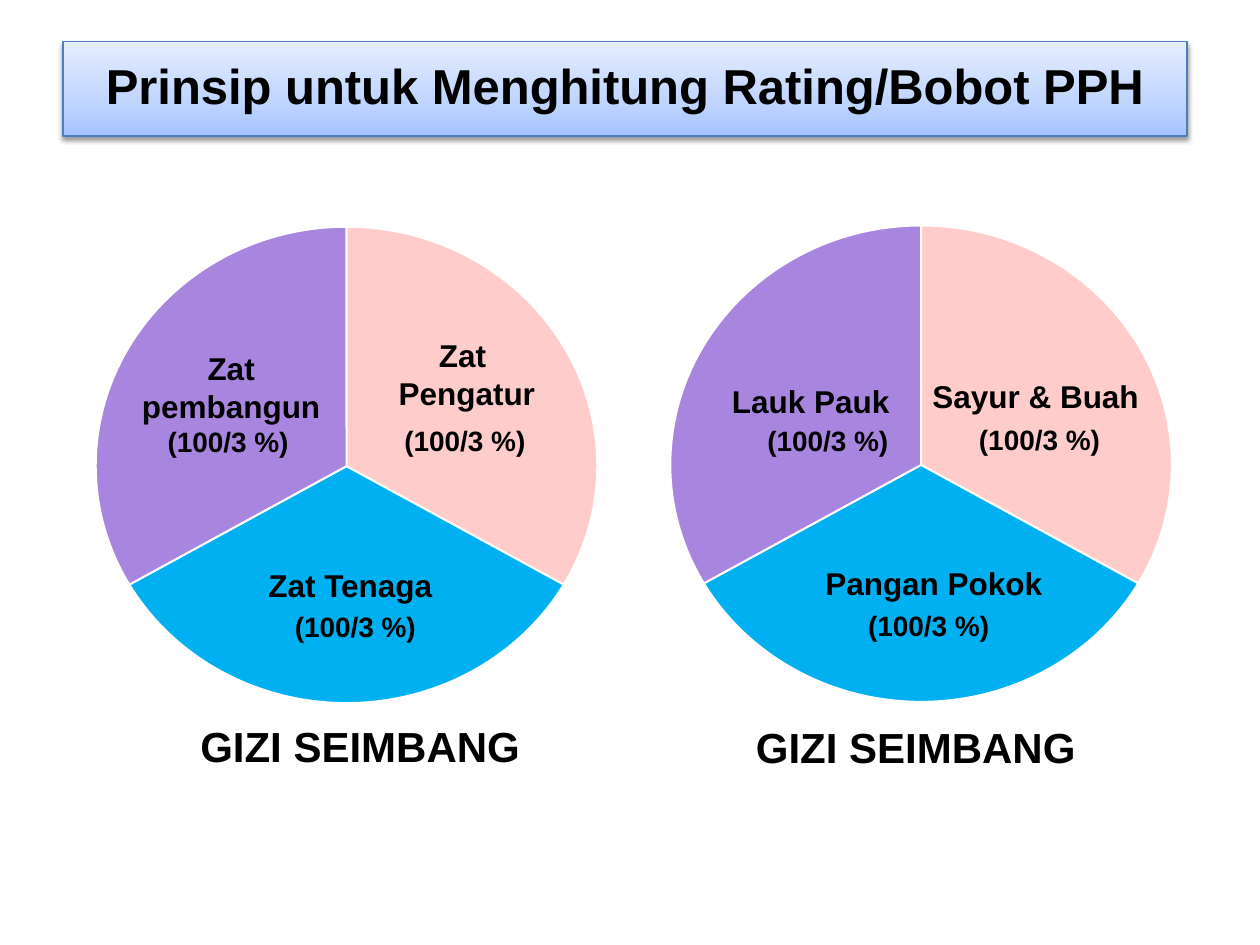
import math
from lxml import etree
from pptx import Presentation
from pptx.dml.color import RGBColor
from pptx.enum import shapes, text
from pptx.oxml import parse_xml
from pptx.util import Inches, Pt

NS = 'xmlns:a="http://schemas.openxmlformats.org/drawingml/2006/main"'
PERCENT = "(100/3 %)"
# Angles run clockwise from the top; each arc is split where it meets an axis
SECTORS = [((0, 90, 120), "FFCCCC"),
           ((120, 180, 240), "00B0F0"),
           ((240, 270, 360), "A886E0")]
RX, RY_TOP, RY_BOTTOM = 1.99, 1.9, 1.88
LEFT, CENTER = text.PP_ALIGN.LEFT, text.PP_ALIGN.CENTER


def rgb(value):
    return RGBColor.from_string(value)


def write(tf, lines, size, align=LEFT):
    for i, line in enumerate(lines):
        p = tf.paragraphs[0] if i == 0 else tf.add_paragraph()
        p.alignment = align
        r = p.add_run()
        r.text = line
        for name, value in dict(name="Arial", size=Pt(size), bold=True).items():
            setattr(r.font, name, value)
        r.font.color.rgb = rgb("000000")


def add_label(parts, box, lines, size, align=LEFT, wrap=False):
    tf = parts.add_textbox(*map(Inches, box)).text_frame
    for side in ("left", "top", "right", "bottom"):
        setattr(tf, f"margin_{side}", 0)
    tf.word_wrap = wrap
    write(tf, lines, size, align)


def add_title(s, box, title):
    sp = s.shapes.add_shape(shapes.MSO_SHAPE.RECTANGLE, *map(Inches, box))
    sp.line.color.rgb = rgb("4B7EBC")
    sp.line.width = Pt(0.75)

    # Three-stop gradient, running from the bottom to the top
    stops = "".join(f'<a:gs pos="{pos}000"><a:srgbClr val="{color}"/></a:gs>'
                    for pos, color in [(0, "A4C4FF"), (35, "BFD4FF"), (100, "E6EEFF")])
    gradient = parse_xml(f'<a:gradFill {NS} rotWithShape="1"><a:gsLst>{stops}</a:gsLst>'
                         '<a:lin ang="16200000" scaled="0"/></a:gradFill>')
    sp.fill.background()
    props = sp.element.spPr
    props.replace(props.find("{*}noFill"), gradient)

    # Soft shadow below the bar
    sp.shadow.inherit = False
    props.find("{*}effectLst").append(etree.fromstring(
        f'<a:outerShdw {NS} blurRad="{Pt(3.1)}" dist="{Pt(1.6)}" dir="5400000" '
        'rotWithShape="0"><a:srgbClr val="000000"><a:alpha val="38000"/></a:srgbClr>'
        '</a:outerShdw>'))

    tf = sp.text_frame
    tf.word_wrap = True
    tf.vertical_anchor = text.MSO_ANCHOR.MIDDLE
    write(tf, [title], 28, CENTER)
    tf.paragraphs[0].line_spacing = 0.9


def arc_points(cx, cy, start, end):
    """Start, two control points and end of a Bezier arc."""
    a, b = math.radians(start), math.radians(end)
    k = 4 / 3 * math.tan((b - a) / 4)
    ry = RY_BOTTOM if 90 <= start < 270 else RY_TOP
    unit = [(math.sin(a), -math.cos(a)),
            (math.sin(a) + k * math.cos(a), -math.cos(a) + k * math.sin(a)),
            (math.sin(b) - k * math.cos(b), -math.cos(b) - k * math.sin(b)),
            (math.sin(b), -math.cos(b))]
    return [(Inches(cx + RX * x), Inches(cy + ry * y)) for x, y in unit]


def add_sector(parts, cx, cy, angles, color):
    first, middle, last = angles
    points = arc_points(cx, cy, first, middle) + arc_points(cx, cy, middle, last)[1:]
    builder = parts.build_freeform(*points[0])
    builder.add_line_segments(points[1:] + [(Inches(cx), Inches(cy))], close=True)
    sp = builder.convert_to_shape()

    # Turn each three steps along the arc into one curve
    steps = sp.element.findall(".//{*}lnTo")
    for i in (0, 3):
        curve = etree.fromstring(f"<a:cubicBezTo {NS}/>")
        steps[i].addprevious(curve)
        for step in steps[i:i + 3]:
            curve.append(step[0])
            step.getparent().remove(step)

    sp.shadow.inherit = False
    sp.fill.solid()
    sp.fill.fore_color.rgb = rgb(color)
    sp.line.color.rgb = rgb("FFFFFF")
    sp.line.width = Pt(1.13)


def add_pie(s, cx, cy, labels):
    """Each label and its percent are placed relative to the pie's centre."""
    parts = s.shapes.add_group_shape().shapes
    for angles, color in SECTORS:
        add_sector(parts, cx, cy, angles, color)
    for (dx, dy, w, h), lines, align, wrap, (px, py) in labels:
        add_label(parts, (cx + dx, cy + dy, w, h), lines, 18, align, wrap)
        add_label(parts, (cx + px, cy + py, 0.97, 0.27), [PERCENT], 16)


def add_caption(s, x, y):
    add_label(s.shapes, (x, y, 2.56, 0.4), ["GIZI SEIMBANG"], 24)


def main():
    prs = Presentation()
    prs.slide_width, prs.slide_height = Inches(10), Inches(7.5)
    s = prs.slides.add_slide(prs.slide_layouts[6])

    # Food groups
    add_caption(s, 6, 5.73)
    add_pie(s, 7.31, 3.69, [
        ((-1.5, -0.66, 1.43, 0.3), ["Lauk Pauk"], LEFT, True, (-1.22, -0.33)),
        ((-0.76, 0.79, 1.88, 0.3), ["Pangan Pokok"], LEFT, False, (-0.42, 1.14)),
        ((0.09, -0.7, 1.7, 0.3), ["Sayur & Buah"], LEFT, False, (0.46, -0.34))])

    add_caption(s, 1.59, 5.72)
    add_title(s, (0.5, 0.33, 8.92, 0.75), "Prinsip untuk Menghitung Rating/Bobot PPH")

    # Nutrients
    add_pie(s, 2.75, 3.7, [
        ((-1.63, -0.93, 1.43, 0.61), ["Zat pembangun"], CENTER, True, (-1.42, -0.33)),
        ((-0.62, 0.79, 1.45, 0.3), ["Zat Tenaga"], LEFT, False, (-0.41, 1.14)),
        ((0.41, -1.03, 1.09, 0.61), ["Zat ", "Pengatur"], CENTER, False, (0.46, -0.34))])

    prs.save("out.pptx")


if __name__ == "__main__":
    main()
